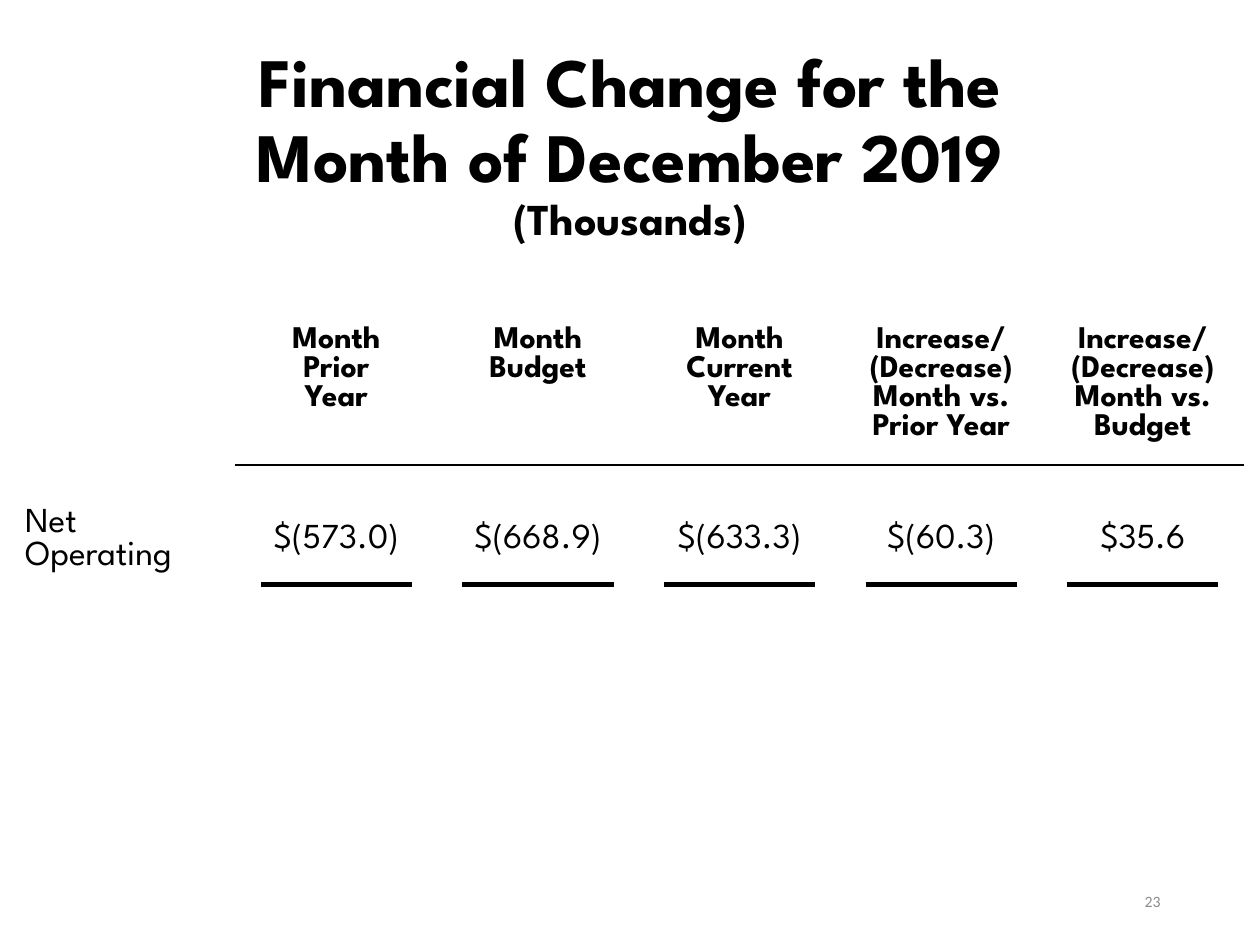
from dataclasses import dataclass

from lxml.etree import SubElement
from pptx import Presentation
from pptx.dml.color import RGBColor
from pptx.enum.shapes import MSO_CONNECTOR
from pptx.enum.text import MSO_ANCHOR, PP_ALIGN
from pptx.oxml.ns import qn
from pptx.util import Inches, Pt


@dataclass(frozen=True)
class Theme:
    """Hold the colours, fonts and type sizes."""
    ink: str = "000000"
    paper: str = "FFFFFF"
    grey: str = "8C8C8C"
    face: str = "League Spartan"
    plain: str = "Calibri"
    title: float = 39.6
    unit: float = 25.2
    head: float = 18
    body: float = 20
    page: float = 9


LOOK = Theme()
LEFT, TOP, STUB, COL = 0.1, 2.54, 1.77, 1.6
ROWS = (1.15, 1.2, 0.41)
RULE_Y, RULE_W = 4.64, 1.2
LABEL = "Net Operating"
DATA = (
    (("Month", "Prior", "Year"), "$(573.0)"),
    (("Month", "Budget"), "$(668.9)"),
    (("Month", "Current Year"), "$(633.3)"),
    (("Increase/ (Decrease) Month vs. Prior Year",), "$(60.3)"),
    (("Increase/ (Decrease) Month vs. Budget",), "$35.6"),
)


def put(item, **form):
    """Set each format value on an item."""
    for key, val in form.items():
        setattr(item, key, val)


def style(run, size, bold=False, face=LOOK.face, tone=LOOK.ink):
    """Format the font of a run."""
    put(run.font, size=Pt(size), bold=bold, name=face)
    run.font.color.rgb = RGBColor.from_string(tone)


def write(frame, lines, align, **form):
    """Write each line as a paragraph of a text frame."""
    for i, line in enumerate(lines):
        para = frame.add_paragraph() if i else frame.paragraphs[0]
        para.alignment = align
        run = para.add_run()
        run.text = line
        style(run, **form)


def add_title(slide):
    """Fill and place the title."""
    box = slide.shapes.title
    put(box, left=Inches(0.9), top=Inches(0.35),
        width=Inches(8.2), height=Inches(2))
    put(box.text_frame, vertical_anchor=MSO_ANCHOR.TOP,
        margin_top=Inches(0.03), word_wrap=True)
    para = box.text_frame.paragraphs[0]
    put(para, alignment=PP_ALIGN.CENTER, line_spacing=0.9)
    lines = (("Financial Change for the", LOOK.title),
             ("Month of December 2019", LOOK.title),
             ("(Thousands)", LOOK.unit))
    for i, (text, size) in enumerate(lines):
        if i:
            para.add_line_break()
        run = para.add_run()
        run.text = text
        style(run, size, True)


def edge(cell, dark):
    """Draw the four cell borders, with the dark side in ink."""
    for side in ("lnL", "lnR", "lnT", "lnB"):
        line = SubElement(cell._tc.get_or_add_tcPr(), qn(f"a:{side}"), w=str(Pt(1)))
        fill = SubElement(line, qn("a:solidFill"))
        tone = LOOK.ink if side == dark else LOOK.paper
        SubElement(fill, qn("a:srgbClr"), val=tone)
    cell.fill.background()


def add_grid(slide):
    """Build the table of monthly results."""
    count = len(DATA) + 1
    frame = slide.shapes.add_table(
        len(ROWS), count, Inches(LEFT), Inches(TOP),
        Inches(STUB + COL * len(DATA)), Inches(sum(ROWS)))
    table = frame.table
    put(table, first_row=False, horz_banding=False)
    for row, high in zip(table.rows, ROWS):
        row.height = Inches(high)
    for i, col in enumerate(table.columns):
        col.width = Inches(COL if i else STUB)
    for r in range(len(ROWS)):
        for c in range(count):
            edge(table.cell(r, c), {0: "lnB", 1: "lnT"}.get(r) if c else None)
    for c in range(count):
        table.cell(1, c).vertical_anchor = MSO_ANCHOR.MIDDLE
    write(table.cell(1, 0).text_frame, [LABEL], PP_ALIGN.LEFT, size=LOOK.body)
    for c, (head, value) in enumerate(DATA, 1):
        write(table.cell(0, c).text_frame, head, PP_ALIGN.CENTER,
              size=LOOK.head, bold=True)
        write(table.cell(1, c).text_frame, [value], PP_ALIGN.CENTER, size=LOOK.body)


def add_rule(slide, col):
    """Draw the thick rule centred under one value."""
    left = LEFT + STUB + COL * col + (COL - RULE_W) / 2
    rule = slide.shapes.add_connector(
        MSO_CONNECTOR.STRAIGHT, Inches(left), Inches(RULE_Y),
        Inches(left + RULE_W), Inches(RULE_Y))
    rule.line.width = Pt(3)
    rule.line.color.rgb = RGBColor.from_string(LOOK.ink)
    SubElement(rule._element.spPr, qn("a:effectLst"))


def add_page(slide):
    """Write the page number."""
    box = slide.shapes.add_textbox(
        Inches(7.06), Inches(6.95), Inches(2.25), Inches(0.4))
    put(box.text_frame, word_wrap=True, vertical_anchor=MSO_ANCHOR.MIDDLE)
    write(box.text_frame, ["23"], PP_ALIGN.RIGHT,
          size=LOOK.page, face=LOOK.plain, tone=LOOK.grey)


def main():
    """Build and save the slide."""
    deck = Presentation()
    put(deck, slide_width=Inches(10), slide_height=Inches(7.5))
    slide = deck.slides.add_slide(deck.slide_layouts.get_by_name("Title Only"))
    add_grid(slide)
    add_title(slide)
    for col in range(len(DATA)):
        add_rule(slide, col)
    add_page(slide)
    deck.save("out.pptx")


if __name__ == "__main__":
    main()
